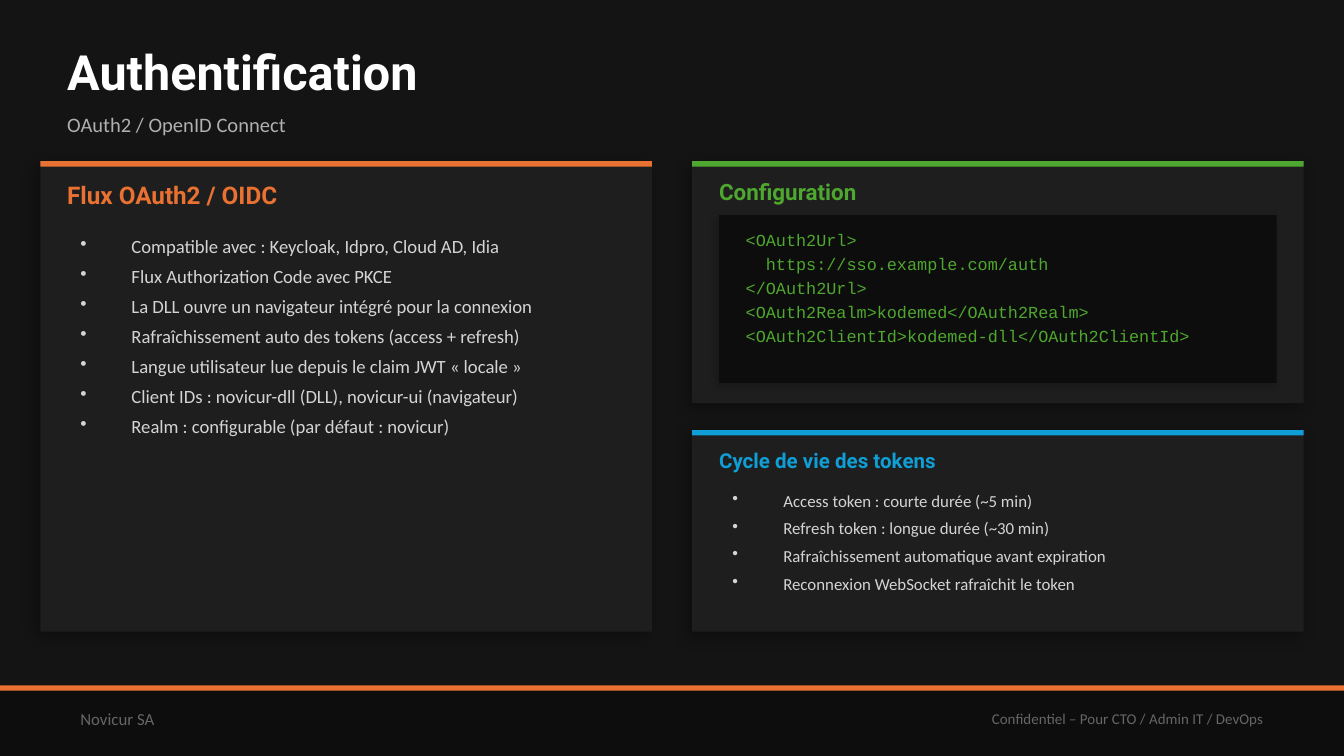
from pptx import Presentation
from pptx.dml.color import RGBColor
from pptx.enum.shapes import MSO_SHAPE as Shape
from pptx.enum.text import MSO_ANCHOR as Anchor, PP_ALIGN as Align
from pptx.oxml.ns import qn
from pptx.util import Inches, Pt
from lxml.etree import SubElement

CELL = 0.05
COLS, ROWS = 200, 112.5
BAR = 0.8
PAD = 4
ORANGE, GREEN, BLUE = "E97132", "4EA72E", "0F9ED5"
BLACK, PANEL, GREY, LIGHT = "0D0D0D", "1E1E1E", "666666", "D4D4D4"

FLOW = [
    "Compatible avec : Keycloak, Idpro, Cloud AD, Idia",
    "Flux Authorization Code avec PKCE",
    "La DLL ouvre un navigateur intégré pour la connexion",
    "Rafraîchissement auto des tokens (access + refresh)",
    "Langue utilisateur lue depuis le claim JWT « locale »",
    "Client IDs : novicur-dll (DLL), novicur-ui (navigateur)",
    "Realm : configurable (par défaut : novicur)",
]
CONFIG = [
    "<OAuth2Url>",
    "  https://sso.example.com/auth",
    "</OAuth2Url>",
    "<OAuth2Realm>kodemed</OAuth2Realm>",
    "<OAuth2ClientId>kodemed-dll</OAuth2ClientId>",
]
TOKENS = [
    "Access token : courte durée (~5 min)",
    "Refresh token : longue durée (~30 min)",
    "Rafraîchissement automatique avant expiration",
    "Reconnexion WebSocket rafraîchit le token",
]


def color(value):
    return RGBColor.from_string(value)


def grid(*cells):
    return [Inches(cell * CELL) for cell in cells]


def add_shadow(shape, alpha, blur, distance):
    effects = shape._element.spPr.find(qn("a:effectLst"))
    outer = SubElement(effects, qn("a:outerShdw"), blurRad=str(Pt(blur)),
                       dist=str(Pt(distance)), dir=str(135 * 60000),
                       algn="bl", rotWithShape="0")
    tint = SubElement(outer, qn("a:srgbClr"), val="000000")
    SubElement(tint, qn("a:alpha"), val=str(alpha * 1000))


def add_block(page, cells, fill, shadow=None):
    block = page.shapes.add_shape(Shape.RECTANGLE, *grid(*cells))
    block.fill.solid()
    block.fill.fore_color.rgb = color(fill)
    block.line.fill.background()
    block.shadow.inherit = False
    if shadow:
        add_shadow(block, *shadow)


def add_bullet(para):
    props = para._p.get_or_add_pPr()
    props.set("marL", str(Inches(0.38)))
    props.set("indent", str(-Inches(0.38)))
    SubElement(props, qn("a:buSzPct"), val="100000")
    SubElement(props, qn("a:buChar"), char="•")


def add_span(para, text, size=10, font="Calibri", fill=LIGHT, bold=False):
    span = para.add_run()
    span.text = text
    span.font.size = Pt(size)
    span.font.name = font
    span.font.bold = bold
    span.font.color.rgb = color(fill)


def add_box(page, cells, anchor=Anchor.MIDDLE, inset=True):
    box = page.shapes.add_textbox(*grid(*cells))
    frame = box.text_frame
    frame.word_wrap = True
    frame.vertical_anchor = anchor
    if not inset:
        frame.margin_left = frame.margin_right = 0
        frame.margin_top = frame.margin_bottom = 0
    return frame


def add_heading(page, cells, text, **style):
    frame = add_box(page, cells, inset=False)
    add_span(frame.paragraphs[0], text, **style)


def add_lines(page, cells, lines, after=4, bullets=True, **style):
    frame = add_box(page, cells, anchor=Anchor.TOP)
    for index, line in enumerate(lines):
        para = frame.add_paragraph() if index else frame.paragraphs[0]
        if bullets:
            add_bullet(para)
        para.space_after = Pt(after)
        add_span(para, line, **style)


def add_card(page, cells, accent, title, size, title_rows=5):
    left, top, width, height = cells
    add_block(page, cells, PANEL, shadow=(35, 8, 3))
    add_block(page, (left, top, width, BAR), accent)
    add_heading(page, (left + PAD, top + 2, width - 2 * PAD, title_rows), title,
                size=size, font="Roboto", fill=accent, bold=True)


def add_footer(page):
    top = 102
    add_block(page, (0, top, COLS, ROWS - top), BLACK)
    add_block(page, (0, top, COLS, BAR), ORANGE)
    company = add_box(page, (10, top + 1, 60, 8)).paragraphs[0]
    add_span(company, "Novicur SA", size=9, fill=GREY)
    notice = add_box(page, (110, top + 1, 80, 8)).paragraphs[0]
    notice.alignment = Align.RIGHT
    add_span(notice, "Confidentiel – Pour CTO / Admin IT / DevOps", size=8, fill=GREY)


def main():
    deck = Presentation()
    deck.slide_width, deck.slide_height = grid(COLS, ROWS)
    page = deck.slides.add_slide(deck.slide_layouts[6])
    page.background.fill.solid()
    page.background.fill.fore_color.rgb = color("141414")

    add_footer(page)
    add_heading(page, (10, 5, 180, 11), "Authentification",
                size=26, font="Roboto", fill="FFFFFF", bold=True)
    add_heading(page, (10, 15, 180, 7), "OAuth2 / OpenID Connect",
                size=11, fill="B0B0B0")

    left, right, width, top = 6, 103, 91, 24
    inner = width - 2 * PAD
    add_card(page, (left, top, width, 70), ORANGE, "Flux OAuth2 / OIDC", 13, title_rows=6)
    add_lines(page, (left + PAD, top + 10, inner, 56), FLOW)

    add_card(page, (right, top, width, 36), GREEN, "Configuration", 12)
    add_block(page, (right + PAD, top + 8, inner, 25), BLACK, shadow=(20, 4, 2))
    add_lines(page, (right + PAD + 2, top + 9.2, inner - 4, 22.6), CONFIG,
              after=2, bullets=False, size=9, font="Courier New", fill=GREEN)

    add_card(page, (right, top + 40, width, 30), BLUE, "Cycle de vie des tokens", 11)
    add_lines(page, (right + PAD, top + 48, inner, 20), TOKENS, size=9)

    deck.save("out.pptx")


if __name__ == "__main__":
    main()
